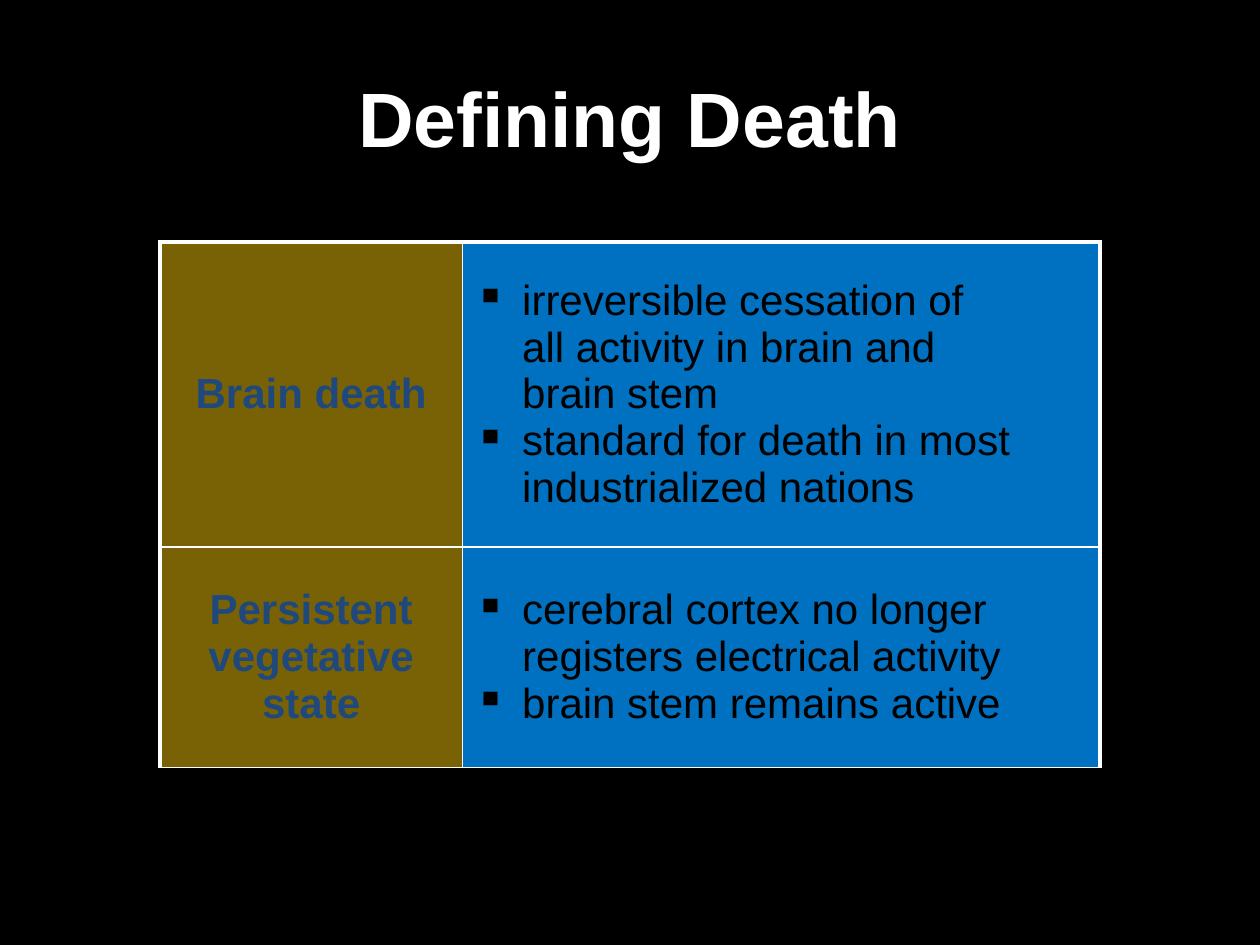
from lxml.etree import SubElement
from pptx import Presentation
from pptx.dml.color import RGBColor as RGB
from pptx.enum.text import MSO_ANCHOR as Anchor, PP_ALIGN as Align
from pptx.oxml.ns import qn
from pptx.util import Pt

TITLE = "Defining Death"
ROWS = [
    ("Brain death",
     ["irreversible cessation of\nall activity in brain and\nbrain stem",
      "standard for death in most industrialized nations"]),
    ("Persistent vegetative state",
     ["cerebral cortex no longer registers electrical activity",
      "brain stem remains active"]),
]
COLORS = {"back": "000000", "title": "FFFFFF", "line": "FFFFFF",
          "term": "1F497D", "gold": "F3C20D", "blue": "0070C0",
          "body": "000000"}
FONT = "Arial"
WIDTHS = [172.8, 364.4]
HEIGHTS = [174.3, 126]
LEFT, TOP = 91.4, 138.2
INDENT = 27
THICK, THIN = 2.25, 1


def color(name):
    return RGB.from_string(COLORS[name])


def style(para, size, name, bold=False):
    font = para.font
    font.name, font.size, font.bold = FONT, Pt(size), bold
    font.color.rgb = color(name)


def bullet(para):
    props = para._p.get_or_add_pPr()
    props.set("marL", str(Pt(INDENT)))
    props.set("indent", str(-Pt(INDENT)))
    mark = props.makeelement(qn("a:buChar"), {"char": "▪"})
    props.insert(0, mark)


def paint(cell, name, alpha=None):
    cell.fill.solid()
    cell.fill.fore_color.rgb = color(name)
    if alpha:
        tone = cell._tc.tcPr.find(".//" + qn("a:srgbClr"))
        SubElement(tone, qn("a:alpha"), val=str(alpha * 1000))


def border(cell, row, col):
    sides = {"L": THIN if col else THICK, "R": THICK if col else THIN,
             "T": THIN if row else THICK, "B": THIN}
    props = cell._tc.get_or_add_tcPr()
    for spot, (side, width) in enumerate(sides.items()):
        line = props.makeelement(qn("a:ln" + side), {"w": str(Pt(width))})
        fill = SubElement(line, qn("a:solidFill"))
        SubElement(fill, qn("a:srgbClr"), val=COLORS["line"])
        props.insert(spot, line)


deck = Presentation()
deck.slide_width, deck.slide_height = Pt(720), Pt(540)
slide = deck.slides.add_slide(deck.slide_layouts[6])
slide.background.fill.solid()
slide.background.fill.fore_color.rgb = color("back")

# Title
frame = slide.shapes.add_textbox(Pt(36), Pt(21.6), Pt(648), Pt(90)).text_frame
frame.word_wrap = True
frame.vertical_anchor = Anchor.MIDDLE
head = frame.paragraphs[0]
head.text, head.alignment = TITLE, Align.CENTER
style(head, 44, "title", True)

# Table of terms and their signs
table = slide.shapes.add_table(len(ROWS), len(WIDTHS), Pt(LEFT), Pt(TOP),
                               Pt(sum(WIDTHS)), Pt(sum(HEIGHTS))).table
table.first_row = table.horz_banding = False
for col, width in zip(table.columns, WIDTHS):
    col.width = Pt(width)
for row, height in zip(table.rows, HEIGHTS):
    row.height = Pt(height)

for r, (term, signs) in enumerate(ROWS):
    left, right = table.cell(r, 0), table.cell(r, 1)
    paint(left, "gold", 50)
    paint(right, "blue")
    for c, cell in enumerate((left, right)):
        cell.vertical_anchor = Anchor.MIDDLE
        border(cell, r, c)

    para = left.text_frame.paragraphs[0]
    para.text, para.alignment = term, Align.CENTER
    style(para, 24, "term", True)

    body = right.text_frame
    for i, sign in enumerate(signs):
        para = body.add_paragraph() if i else body.paragraphs[0]
        para.text = sign
        style(para, 24, "body")
        bullet(para)

deck.save("out.pptx")
